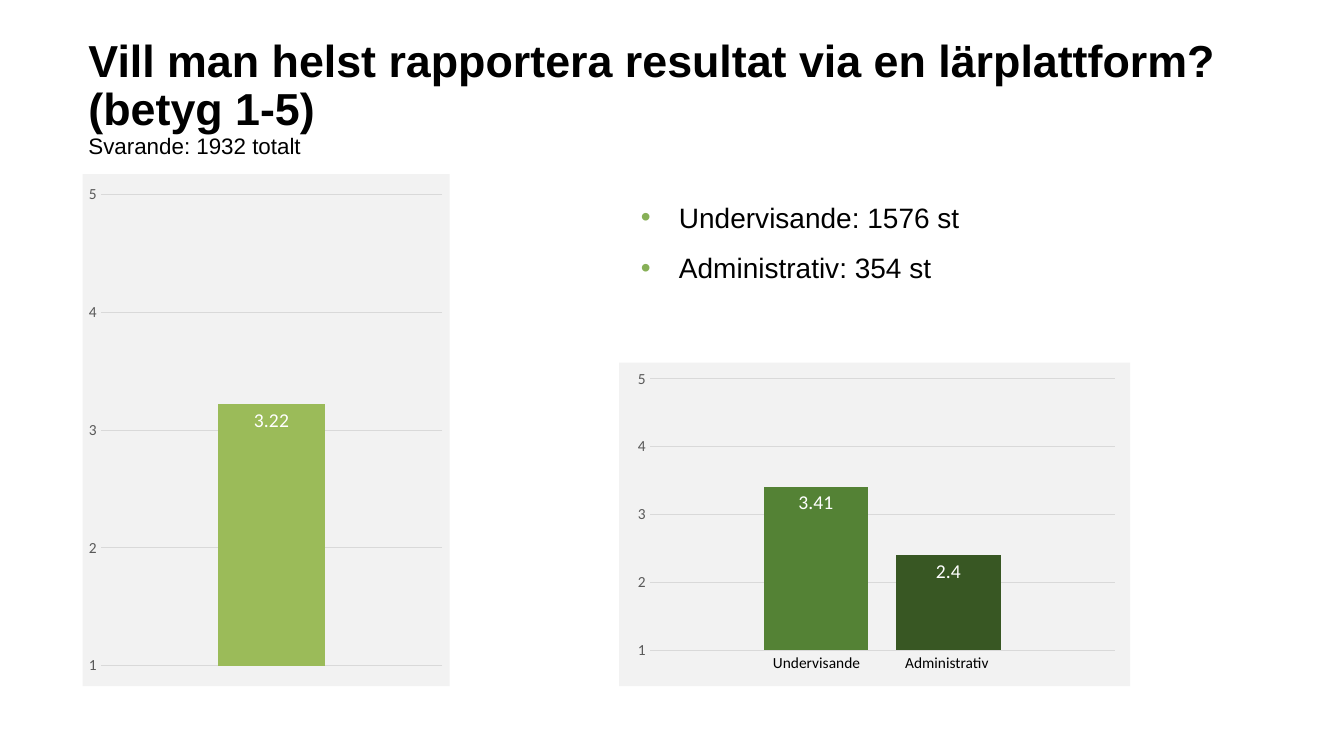
from lxml import etree
from pptx import Presentation
from pptx.chart import data as chart_data
from pptx.dml.color import RGBColor
from pptx.enum import chart as ch, text
from pptx.oxml import ns, parse_xml
from pptx.util import Cm, Pt

COLORS = {"text": "000000", "axis": "595959", "grid": "D9D9D9", "panel": "F2F2F2",
          "bullet": "87B057", "label": "FFFFFF", "all": "9BBB59",
          "teaching": "548235", "admin": "385723"}


def rgb(name):
    return RGBColor.from_string(COLORS[name])


def style(font, color="text", **formats):
    for attribute, value in formats.items():
        setattr(font, attribute, value)
    font.color.rgb = rgb(color)


def add_frame(slide, box, **formats):
    frame = slide.shapes.add_textbox(*map(Cm, box)).text_frame
    for attribute, value in {"word_wrap": True, **formats}.items():
        setattr(frame, attribute, value)
    return frame


def add_title(slide, box, question, respondents):
    frame = add_frame(slide, box, vertical_anchor=text.MSO_ANCHOR.BOTTOM)
    heading = frame.paragraphs[0]
    heading.line_spacing = 0.9
    for wording, size, bold in ((question, 32, True), (respondents, 16, False)):
        if heading.runs:
            heading.add_line_break()
        run = heading.add_run()
        run.text = wording
        style(run.font, name="Arial", size=Pt(size), bold=bold)


def add_bullets(slide, box, items):
    frame = add_frame(slide, box)
    for index, item in enumerate(items):
        bullet = frame.add_paragraph() if index else frame.paragraphs[0]
        bullet.text = item
        bullet.space_before = Pt(12 if index else 0)
        props = bullet._p.get_or_add_pPr()
        props.set("marL", str(Cm(0.96)))
        props.set("indent", str(-Cm(0.96)))
        color = etree.SubElement(props, ns.qn("a:buClr"))
        etree.SubElement(color, ns.qn("a:srgbClr"), val=COLORS["bullet"])
        etree.SubElement(props, ns.qn("a:buFont"), typeface="Arial")
        etree.SubElement(props, ns.qn("a:buChar"), char="•")
        style(bullet.runs[0].font, name="Arial", size=Pt(20))


def add_bar_name(slide, box, name):
    frame = add_frame(slide, box, word_wrap=False,
                      auto_size=text.MSO_AUTO_SIZE.SHAPE_TO_FIT_TEXT)
    frame.text = name
    style(frame.paragraphs[0].runs[0].font, name="Calibri", size=Pt(11))


def fill_panel(chart):
    """Colour the whole chart area behind the plot."""
    area = chart._chartSpace.find(ns.qn("c:chart"))
    area.addnext(parse_xml(
        f'<c:spPr {ns.nsdecls("c", "a")}><a:solidFill><a:srgbClr val="{COLORS["panel"]}"/>'
        '</a:solidFill><a:ln><a:noFill/></a:ln></c:spPr>'))


def place_plot(chart, position):
    """Fix the inner plot area as fractions of the chart."""
    plot_area = chart._chartSpace.find(".//" + ns.qn("c:plotArea"))
    for old in plot_area.findall(ns.qn("c:layout")):
        plot_area.remove(old)
    layout = etree.Element(ns.qn("c:layout"))
    manual = etree.SubElement(layout, ns.qn("c:manualLayout"))
    settings = {"layoutTarget": "inner", "xMode": "edge", "yMode": "edge",
                **dict(zip("xywh", position))}
    for tag, value in settings.items():
        etree.SubElement(manual, ns.qn(f"c:{tag}"), val=str(value))
    plot_area.insert(0, layout)


def add_grade_chart(slide, box, plot_position, bars, label_format):
    grades = chart_data.CategoryChartData()
    grades.categories = ["1"]
    for number, (grade, _) in enumerate(bars, 1):
        grades.add_series(f"Series {number}", [grade])
    chart = slide.shapes.add_chart(
        ch.XL_CHART_TYPE.COLUMN_CLUSTERED, *map(Cm, box), grades).chart
    chart.has_legend = chart.has_title = False
    style(chart.font, name="Calibri", size=Pt(10))
    fill_panel(chart)
    place_plot(chart, plot_position)

    chart.category_axis.visible = False
    scale = chart.value_axis
    axis_formats = {"minimum_scale": 1, "maximum_scale": 5, "major_unit": 1,
                    "major_tick_mark": ch.XL_TICK_MARK.NONE,
                    "minor_tick_mark": ch.XL_TICK_MARK.NONE}
    for attribute, value in axis_formats.items():
        setattr(scale, attribute, value)
    scale.tick_labels.number_format = "0"
    scale.tick_labels.number_format_is_linked = False
    style(scale.tick_labels.font, "axis", name="Calibri", size=Pt(11))
    scale.format.line.fill.background()
    scale.major_gridlines.format.line.color.rgb = rgb("grid")
    scale.major_gridlines.format.line.width = Pt(0.75)

    plot = chart.plots[0]
    for attribute, value in {"gap_width": 219, "overlap": -27,
                             "vary_by_categories": False}.items():
        setattr(plot, attribute, value)
    label_formats = {"show_value": True, "number_format": label_format,
                     "number_format_is_linked": False,
                     "position": ch.XL_LABEL_POSITION.INSIDE_END}
    for series, (_, color) in zip(plot.series, bars):
        series.format.fill.solid()
        series.format.fill.fore_color.rgb = rgb(color)
        for attribute, value in label_formats.items():
            setattr(series.data_labels, attribute, value)
        style(series.data_labels.font, "label", name="Calibri", size=Pt(14))


def main():
    deck = Presentation()
    deck.slide_width, deck.slide_height = Cm(33.87), Cm(19.05)
    slide = deck.slides.add_slide(deck.slide_layouts[6])
    add_title(slide, (1.98, 2.11, 28.96, 2.03),
              "Vill man helst rapportera resultat via en lärplattform? (betyg 1-5)",
              "Svarande: 1932 totalt")
    add_grade_chart(slide, (2.08, 4.39, 9.25, 12.9), (0.05, 0.04, 0.93, 0.92),
                    [(3.22, "all")], "0.00")
    add_bullets(slide, (15.9, 4.93, 14.27, 10.85),
                ["Undervisande: 1576 st", "Administrativ: 354 st"])
    add_grade_chart(slide, (15.6, 9.14, 12.88, 8.15), (0.06, 0.05, 0.91, 0.84),
                    [(3.41, "teaching"), (2.4, "admin")], "General")
    add_bar_name(slide, (19.23, 16.33, 2.72, 0.74), "Undervisande")
    add_bar_name(slide, (22.56, 16.33, 2.64, 0.74), "Administrativ")
    deck.save("out.pptx")


if __name__ == "__main__":
    main()
